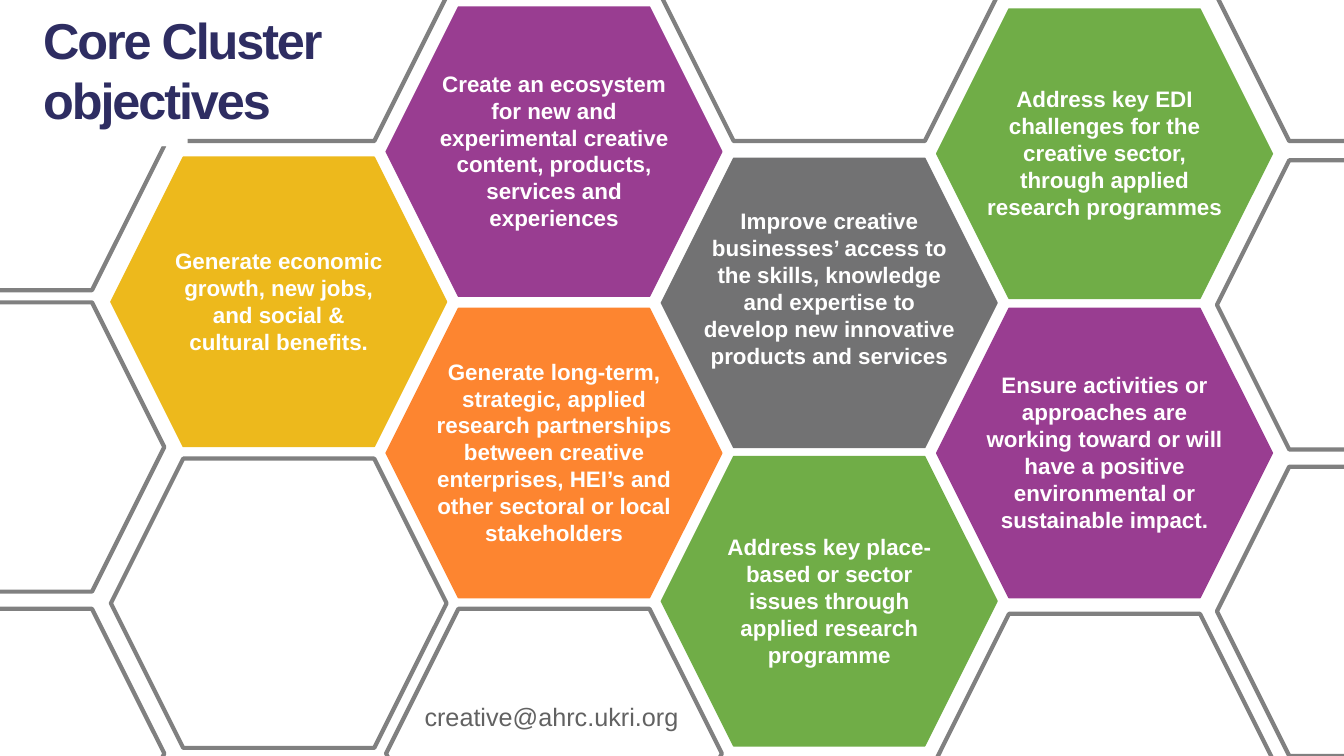
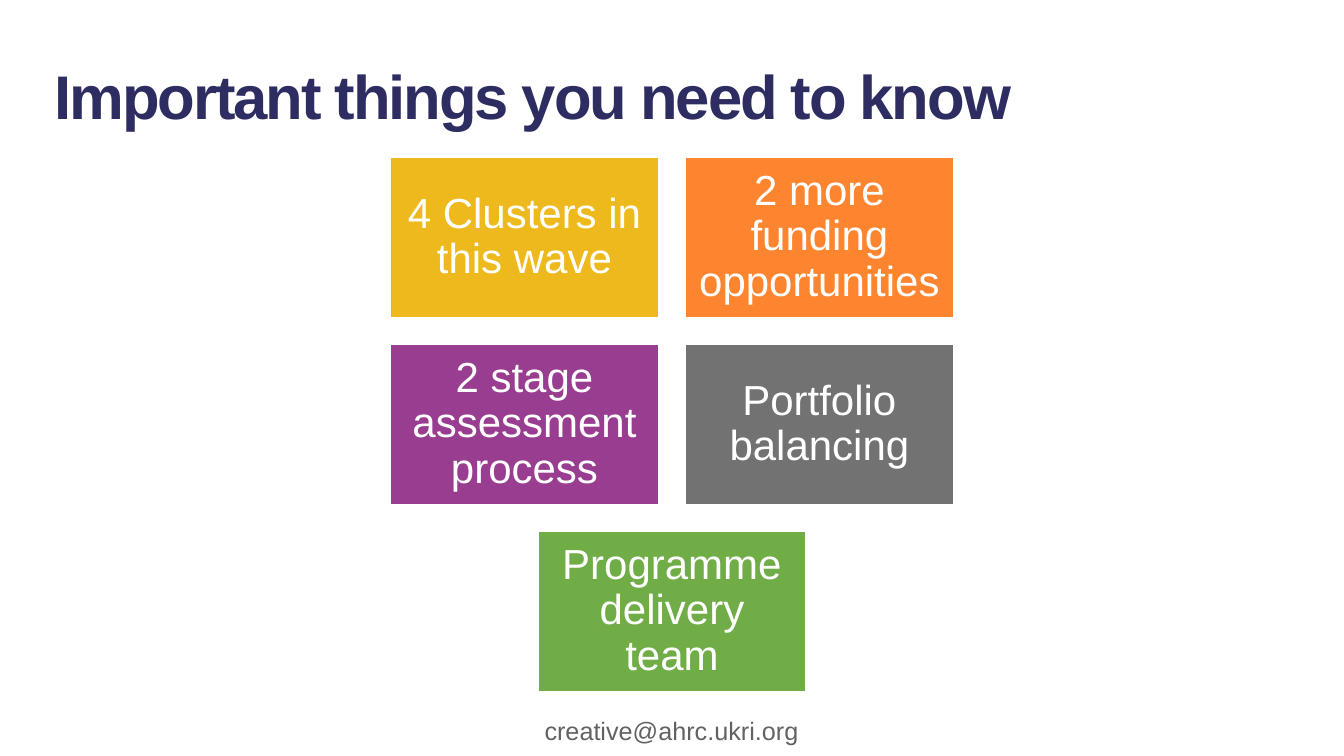
from pptx import Presentation, util as u
from pptx.dml.color import RGBColor
from pptx.enum import shapes, text

YELLOW = RGBColor(0xED, 0xB9, 0x1C)
PURPLE = RGBColor(0x99, 0x3D, 0x91)
ORANGE = RGBColor(0xFD, 0x85, 0x30)
GREEN = RGBColor(0x70, 0xAD, 0x47)
GREY = RGBColor(0x72, 0x72, 0x73)
OUTLINE = RGBColor(0x80, 0x80, 0x80)
NAVY = RGBColor(0x2E, 0x2D, 0x62)
FOOTER_GREY = RGBColor(0x62, 0x62, 0x62)
WHITE = RGBColor(0xFF, 0xFF, 0xFF)

SLIDE_W, SLIDE_H = 13.33, 7.5
FONT = "Arial"
CONTACT = "creative@ahrc.ukri.org"

# Honeycomb: left edge of each column, and the size of one cell
COLUMNS = [-1.7, 1.1, 3.83, 6.56, 9.29, 12.07]
CELL_W, CELL_H = 3.33, 2.87
LINE_H, INSET = 0.27, 0.05

# Column, top, colour, text width, text lines, objective
OBJECTIVES = [
    (1, 1.56, YELLOW, 2.33, 4,
     "Generate economic growth, new jobs, and social & cultural benefits."),
    (2, 0.07, PURPLE, 2.49, 6,
     "Create an ecosystem for new and experimental creative content, "
     "products, services and experiences"),
    (2, 3.06, ORANGE, 2.59, 7,
     "Generate long-term, strategic, applied research partnerships between "
     "creative enterprises, HEI’s and other sectoral or local stakeholders"),
    (4, 0.09, GREEN, 2.59, 5,
     "Address key EDI challenges for the creative sector, through applied "
     "research programmes"),
    (3, 1.57, GREY, 2.69, 7,
     "Improve creative businesses’ access to the skills, knowledge and "
     "expertise to develop new innovative products and services"),
    (3, 4.53, GREEN, 2.32, 5,
     "Address key place-based or sector issues through applied research "
     "programme"),
    (4, 3.06, PURPLE, 2.59, 6,
     "Ensure activities or approaches are working toward or will have a "
     "positive environmental or sustainable impact."),
]
# Column and top of the empty cells
EMPTY_CELLS = [(3, -1.47), (5, -1.47), (5, 1.59), (5, 4.63), (4, 6.09), (2, 6.04),
               (1, 4.55), (0, 3), (0, 0.01), (1, -1.47), (0, 6.04)]
# White patches that keep the title corner clear
TITLE_PATCHES = [(0, 0, 3, 1.28), (1.49, 1.25, 0.29, 0.2), (1.57, 1.17, 0.29, 0.28)]

# Rows of tiles, each centred on the slide
TILE_ROWS = [
    [("4 Clusters in this wave", YELLOW), ("2 more funding opportunities", ORANGE)],
    [("2 stage assessment process", PURPLE), ("Portfolio balancing", GREY)],
    [("Programme delivery team", GREEN)],
]
TILE_W, TILE_H, TILE_GAP, TILES_TOP = 2.66, 1.59, 0.265, 1.56


def write(frame, lines, size, color, bold=False, align=text.PP_ALIGN.CENTER,
          anchor=text.MSO_ANCHOR.TOP, margin=None, spacing=None, tracking=None):
    frame.word_wrap = True
    frame.vertical_anchor = anchor
    if margin is not None:
        frame.margin_left = frame.margin_right = u.Inches(margin)
        frame.margin_top = frame.margin_bottom = u.Inches(margin)
    for i, line in enumerate(lines):
        paragraph = frame.add_paragraph() if i else frame.paragraphs[0]
        paragraph.alignment = align
        if spacing:
            paragraph.line_spacing = spacing
        run = paragraph.add_run()
        run.text = line
        run.font.name, run.font.size, run.font.bold = FONT, u.Pt(size), bold
        run.font.color.rgb = color
        if tracking:
            run.font._element.set("spc", str(int(tracking * 100)))


def box(slide, *place):
    return slide.shapes.add_textbox(*map(u.Inches, place)).text_frame


def draw(slide, kind, place, fill=None, line=None, weight=1):
    shape = slide.shapes.add_shape(kind, *map(u.Inches, place))
    shape.shadow.inherit = False
    if fill is None:
        shape.fill.background()
    else:
        shape.fill.solid()
        shape.fill.fore_color.rgb = fill
    if line is None:
        shape.line.fill.background()
    else:
        shape.line.color.rgb = line
        shape.line.width = u.Pt(weight)
    return shape


def title(slide, place, lines, size):
    write(box(slide, *place), lines, size, NAVY, bold=True,
          align=text.PP_ALIGN.LEFT, tracking=-1.5)


def footer(slide, left, top):
    write(box(slide, left, top, 2.84, 0.4), [CONTACT], 18, FOOTER_GREY,
          anchor=text.MSO_ANCHOR.MIDDLE)


def objectives_slide(slide):
    hexagon = shapes.MSO_SHAPE.HEXAGON
    for column, top, color, width, lines, objective in OBJECTIVES:
        left = COLUMNS[column]
        draw(slide, hexagon, (left, top, CELL_W, CELL_H), color, color)
        height = lines * LINE_H + 2 * INSET
        label = box(slide, left + (CELL_W - width) / 2, top + (CELL_H - height) / 2,
                    width, height)
        write(label, [objective], 16, WHITE, bold=True)
    for column, top in EMPTY_CELLS:
        draw(slide, hexagon, (COLUMNS[column], top, CELL_W, CELL_H),
             line=OUTLINE, weight=3)
    for patch in TITLE_PATCHES:
        draw(slide, shapes.MSO_SHAPE.RECTANGLE, patch, WHITE)
    title(slide, (0.33, 0.04, 3.18, 1.31), ["Core Cluster", "objectives"], 36)
    footer(slide, 4.05, 6.91)


def need_to_know_slide(slide):
    title(slide, (0.44, 0.53, 12.78, 0.84), ["Important things you need to know"], 44)
    for r, row in enumerate(TILE_ROWS):
        row_w = len(row) * (TILE_W + TILE_GAP) - TILE_GAP
        for c, (label, color) in enumerate(row):
            left = (SLIDE_W - row_w) / 2 + c * (TILE_W + TILE_GAP)
            top = TILES_TOP + r * (TILE_H + TILE_GAP)
            tile = draw(slide, shapes.MSO_SHAPE.RECTANGLE,
                        (left, top, TILE_W, TILE_H), color, WHITE)
            write(tile.text_frame, [label], 30, WHITE, margin=0.12, spacing=0.9,
                  anchor=text.MSO_ANCHOR.MIDDLE)
    footer(slide, 5.24, 7.05)


def main():
    deck = Presentation()
    deck.slide_width, deck.slide_height = u.Inches(SLIDE_W), u.Inches(SLIDE_H)
    for build in (objectives_slide, need_to_know_slide):
        build(deck.slides.add_slide(deck.slide_layouts[6]))
    deck.save("out.pptx")


if __name__ == "__main__":
    main()
